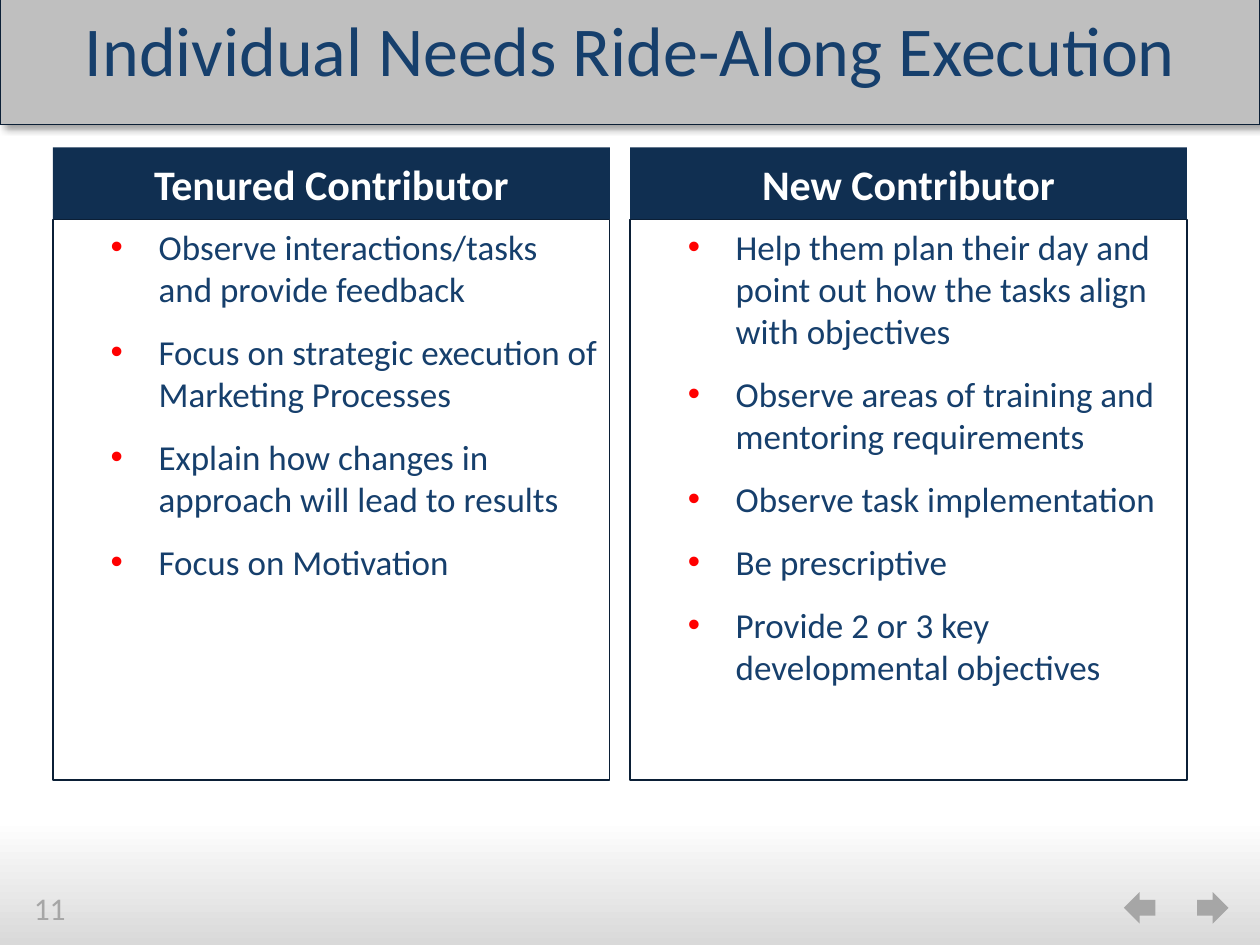
"""Build the ride-along execution slide comparing two contributor types."""
import lxml.etree
import pptx
import pptx.dml.color
import pptx.enum.shapes
import pptx.enum.text
import pptx.oxml.ns
import pptx.util

Inches, Pt = pptx.util.Inches, pptx.util.Pt
SHAPE = pptx.enum.shapes.MSO_SHAPE
ALIGN = pptx.enum.text.PP_ALIGN
ANCHOR = pptx.enum.text.MSO_ANCHOR
qn = pptx.oxml.ns.qn
NAVY, BLUE, EDGE, GREY = "102F51", "163F6C", "0B1F36", "A6A6A6"


def rgb(value):
    return pptx.dml.color.RGBColor.from_string(value)


def write(shape, lines, size, color, bold=False, align=ALIGN.LEFT,
          anchor=ANCHOR.TOP, bullet=None, gap=0, spacing=None):
    frame = shape.text_frame
    frame.word_wrap = True
    frame.auto_size = pptx.enum.text.MSO_AUTO_SIZE.NONE
    frame.vertical_anchor = anchor
    for index, line in enumerate(lines):
        paragraph = frame.add_paragraph() if index else frame.paragraphs[0]
        paragraph.alignment = align
        paragraph.space_before = Pt(gap if index else 0)
        paragraph.space_after = Pt(gap)
        if spacing:
            paragraph.line_spacing = Pt(spacing)
        if bullet:
            properties = paragraph._p.get_or_add_pPr()
            properties.set("marL", str(Inches(0.74)))
            properties.set("indent", str(Inches(-0.38)))
            tint = lxml.etree.SubElement(properties, qn("a:buClr"))
            lxml.etree.SubElement(tint, qn("a:srgbClr"), val=bullet)
            lxml.etree.SubElement(properties, qn("a:buFont"), typeface="Arial")
            lxml.etree.SubElement(properties, qn("a:buChar"), char="•")
        run = paragraph.add_run()
        run.text = line
        run.font.name, run.font.size, run.font.bold = "Calibri", Pt(size), bold
        run.font.color.rgb = rgb(color)


deck = pptx.Presentation()
deck.slide_width, deck.slide_height = Inches(10), Inches(7.5)
slide = deck.slides.add_slide(deck.slide_layouts[5])
shapes = slide.shapes

footer = shapes.add_shape(SHAPE.RECTANGLE, 0, Inches(6.5), Inches(10), Inches(1))
footer.shadow.inherit = False
footer.line.fill.background()
footer.fill.gradient()
footer.fill.gradient_angle = 90
for stop, shade in zip(footer.fill.gradient_stops, ("D9D9D9", "FFFFFF")):
    stop.color.rgb = rgb(shade)

for direction, left in ((SHAPE.RIGHT_ARROW, 9.5), (SHAPE.LEFT_ARROW, 8.92)):
    arrow = shapes.add_shape(direction, Inches(left), Inches(7.08), Inches(0.25), Inches(0.25))
    arrow.shadow.inherit = False
    arrow.fill.solid()
    arrow.fill.fore_color.rgb = rgb(GREY)
    arrow.line.fill.background()

page_number = shapes.add_textbox(Inches(0.17), Inches(7.01), Inches(1), Inches(0.4))
write(page_number, ["11"], 18, GREY)

columns = [
    (0.42, "Tenured Contributor", [
        "Observe interactions/tasks and provide feedback",
        "Focus on strategic execution of Marketing Processes",
        "Explain how changes in approach will lead to results",
        "Focus on Motivation",
    ]),
    (5, "New Contributor", [
        "Help them plan their day and point out how the tasks align with objectives",
        "Observe areas of training and mentoring requirements",
        "Observe task implementation",
        "Be prescriptive",
        "Provide 2 or 3 key developmental objectives",
    ]),
]
for left, heading, points in columns:
    header = shapes.add_shape(SHAPE.RECTANGLE, Inches(left), Inches(1.17), Inches(4.42), Inches(0.57))
    header.shadow.inherit = False
    header.fill.solid()
    header.fill.fore_color.rgb = rgb(NAVY)
    header.line.fill.background()
    write(header, [heading], 24, "FFFFFF", bold=True, align=ALIGN.CENTER, anchor=ANCHOR.MIDDLE)

    panel = shapes.add_shape(SHAPE.RECTANGLE, Inches(left), Inches(1.74), Inches(4.42), Inches(4.45))
    panel.shadow.inherit = False
    panel.fill.background()
    panel.line.color.rgb = rgb(EDGE)
    panel.line.width = Pt(0.75)
    write(panel, points, 20, BLUE, bullet="FF0000", gap=6)

title = shapes.title
title.left, title.top, title.width, title.height = 0, Inches(-0.01), Inches(10), Inches(1)
title.fill.solid()
title.fill.fore_color.rgb = rgb("BFBFBF")
title.line.color.rgb = rgb(EDGE)
title.line.width = Pt(0.75)
title.shadow.inherit = False
effects = title._element.spPr.find(qn("a:effectLst"))
shadow = lxml.etree.SubElement(effects, qn("a:outerShdw"), blurRad=str(Pt(4)),
                               dist=str(Pt(3)), dir="2700000", rotWithShape="0")
shadow_color = lxml.etree.SubElement(shadow, qn("a:srgbClr"), val="000000")
lxml.etree.SubElement(shadow_color, qn("a:alpha"), val="40000")
write(title, ["Individual Needs Ride-Along Execution"], 40, BLUE,
      align=ALIGN.CENTER, anchor=ANCHOR.MIDDLE, spacing=33)

deck.save("out.pptx")
